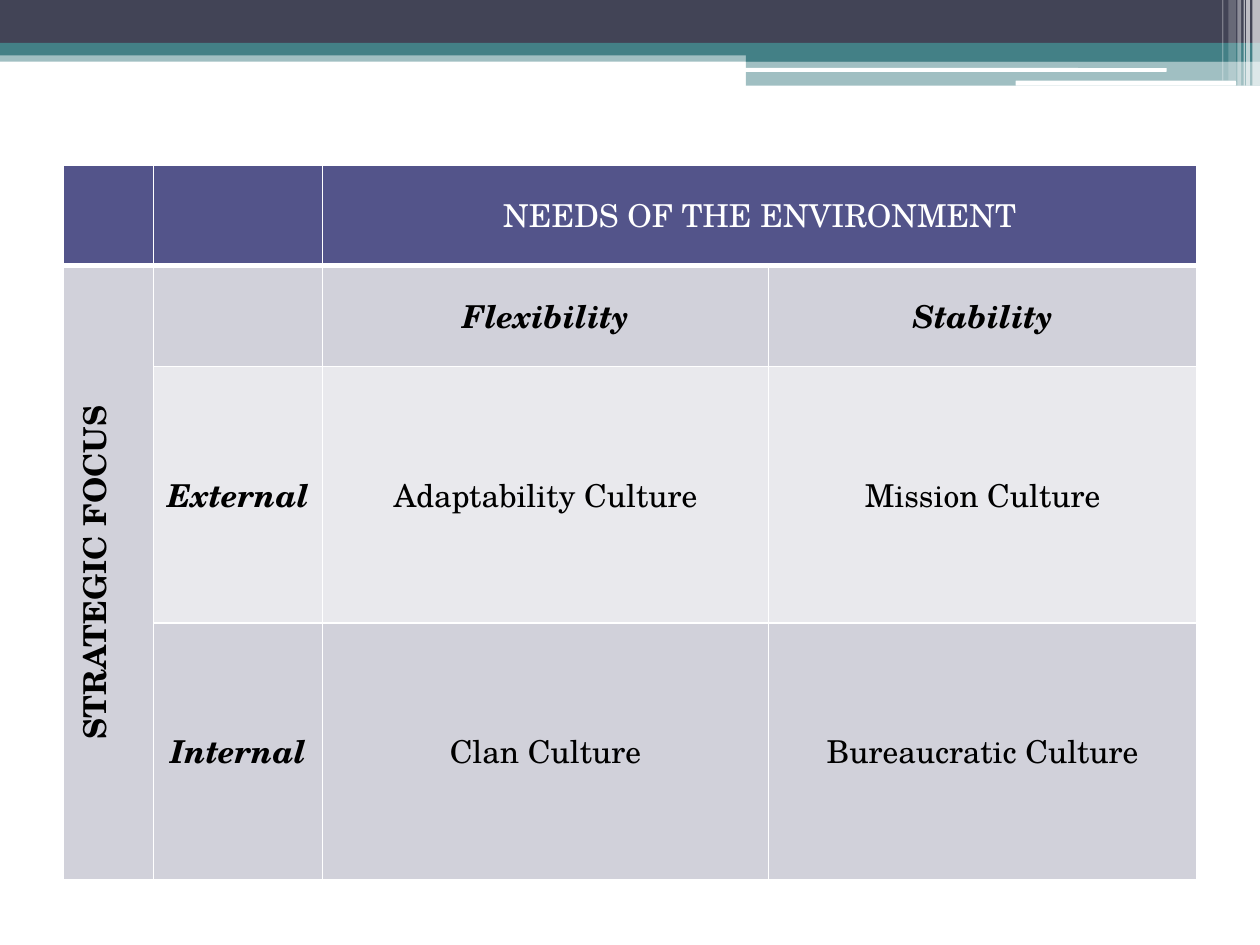
from lxml.etree import SubElement
from pptx import Presentation
from pptx.dml.color import RGBColor
from pptx.enum.shapes import MSO_SHAPE
from pptx.enum.text import MSO_ANCHOR, PP_ALIGN
from pptx.oxml import parse_xml
from pptx.oxml.ns import nsdecls, qn
from pptx.util import Inches, Pt

WIDE, HIGH = Inches(10), Inches(7.5)
COLS, ROWS = 1000, 750
FONT = "TeX Gyre Schola"
COLOR = {
    "slate": "424456", "teal": "438086", "white": "FFFFFF", "black": "000000",
    "head": "53548A", "dark": "D1D1DA", "light": "E9E9ED",
}


def across(cols):
    return round(WIDE * cols / COLS)


def down(rows):
    return round(HIGH * rows / ROWS)


def paint(fill, name, alpha=100):
    fill.solid()
    fill.fore_color.rgb = RGBColor.from_string(COLOR[name])
    if alpha < 100:
        tint = fill._xPr.find(qn("a:solidFill"))[0]
        SubElement(tint, qn("a:alpha"), val=str(alpha * 1000))


def add_bar(slide, box, name, alpha=100, kind=MSO_SHAPE.RECTANGLE):
    left, top, width, height = box
    bar = slide.shapes.add_shape(
        kind, across(left), down(top), across(width), down(height))
    bar.shadow.inherit = False
    bar.line.fill.background()
    paint(bar.fill, name, alpha)


def add_banner(slide, box):
    left, top, width, height = box
    half = left + 0.592 * width
    rest = left + width - half
    for x, y, wide, high, name, alpha in (
        (left, 40, width, 9, "teal", 50),
        (left, 0, width, 34, "slate", 100),
        (left, 34, width, 10, "teal", 100),
        (half, 39, rest, 10, "teal", 100),
        (half, 48, rest, height - 48, "teal", 50),
    ):
        add_bar(slide, (x, top + y, wide, high), name, alpha)
    for x, y, wide, high in ((591, 54, 335, 3), (806, 64, 175, 4)):
        add_bar(slide, (left + x, top + y, wide, high), "white",
                kind=MSO_SHAPE.ROUNDED_RECTANGLE)
    for x, wide, gap, alpha in (
        (994, 6, 0, 65), (989, 3, 0, 65), (987, 1, 0, 60),
        (982, 3, 0, 40), (975, 6, 4, 20), (970, 1, 4, 30),
    ):
        add_bar(slide, (left + x, top, wide, height - gap), "white", alpha)


def add_edges(cell, base):
    props = cell._tc.get_or_add_tcPr()
    for spot, (side, size) in enumerate(zip("LRTB", (1, 1, 1, base))):
        props.insert(spot, parse_xml(
            f'<a:ln{side} {nsdecls("a")} w="{Pt(size)}"><a:solidFill>'
            f'<a:srgbClr val="{COLOR["white"]}"/></a:solidFill></a:ln{side}>'))


def set_text(cell, text, name, bold, slant):
    cell.vertical_anchor = MSO_ANCHOR.MIDDLE
    cell.text_frame.text = text
    line = cell.text_frame.paragraphs[0]
    line.alignment = PP_ALIGN.CENTER
    for run in line.runs:
        font = run.font
        font.name, font.size = FONT, Pt(18)
        font.bold, font.italic = bold, slant
        font.color.rgb = RGBColor.from_string(COLOR[name])


def add_matrix(slide, box):
    left, top, width, height = box
    words = (
        ("", "", "NEEDS OF THE ENVIRONMENT", ""),
        ("STRATEGIC FOCUS", "", "Flexibility", "Stability"),
        ("", "External", "Adaptability Culture", "Mission Culture"),
        ("", "Internal", "Clan Culture", "Bureaucratic Culture"),
    )
    fills = ("head", "dark", "light", "dark")
    wides, highs = (0.08, 0.149, 0.393, 0.378), (0.141, 0.141, 0.359, 0.359)
    table = slide.shapes.add_table(
        len(highs), len(wides), across(left), down(top),
        across(width), down(height)).table
    for col, share in zip(table.columns, wides):
        col.width = across(width * share)
    for row, share in zip(table.rows, highs):
        row.height = down(height * share)
    for r, line in enumerate(words):
        for c, text in enumerate(line):
            cell = table.cell(r, c)
            paint(cell.fill, fills[r])
            add_edges(cell, 1 if r else 3)
            if text:
                label = r > 0 and (r == 1 or c == 1)
                set_text(cell, text, "black" if r else "white",
                         label, label and c > 0)
    table.cell(0, 2).merge(table.cell(0, 3))
    focus = table.cell(1, 0)
    focus.merge(table.cell(3, 0))
    focus._tc.get_or_add_tcPr().set("vert", "vert270")


def main():
    deck = Presentation()
    deck.slide_width, deck.slide_height = WIDE, HIGH
    slide = deck.slides.add_slide(deck.slide_layouts[6])
    add_banner(slide, (0, 0, COLS, 68))
    add_matrix(slide, (50, 131, 900, 567))
    deck.save("out.pptx")


if __name__ == "__main__":
    main()
